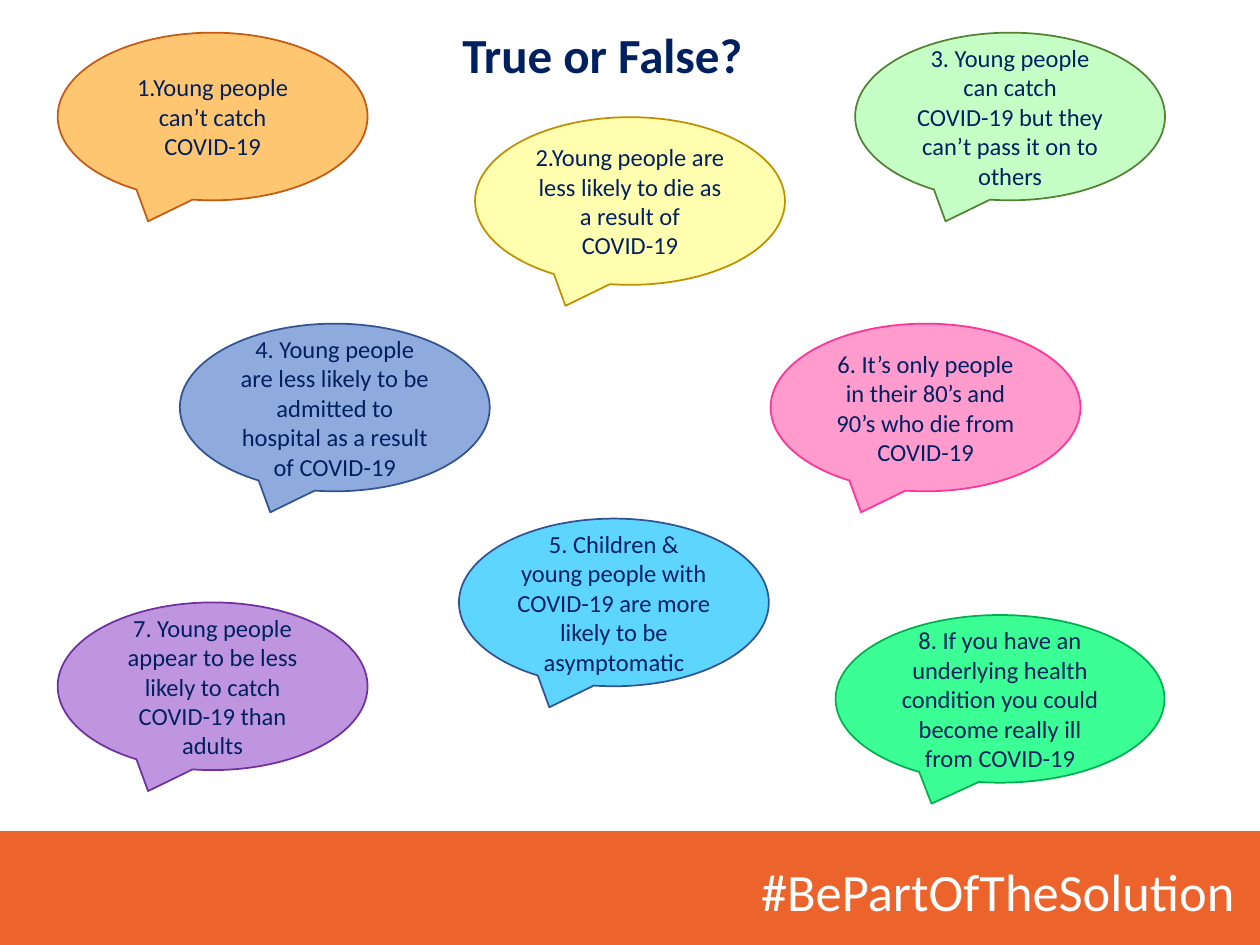
from dataclasses import dataclass

from pptx import Presentation
from pptx.dml.color import RGBColor
from pptx.enum.shapes import MSO_SHAPE as Shape
from pptx.enum.text import MSO_ANCHOR as Anchor, MSO_AUTO_SIZE as AutoSize, PP_ALIGN as Align
from pptx.util import Pt


@dataclass(frozen=True)
class Theme:
    font: str = "Calibri"
    navy: str = "002060"
    orange: str = "EC632B"
    white: str = "FFFFFF"
    title_size: int = 28
    bubble_size: int = 14
    hashtag_size: int = 30


theme = Theme()


def add_filled(kind, box, fill, line):
    shape = slide.shapes.add_shape(kind, *map(Pt, box))
    shape.shadow.inherit = False
    shape.fill.solid()
    shape.fill.fore_color.rgb = RGBColor.from_string(fill)
    shape.line.color.rgb = RGBColor.from_string(line)
    shape.line.width = Pt(1)
    return shape


def write(shape, text, size, color, align, bold=False):
    frame = shape.text_frame
    frame.word_wrap = True
    frame.auto_size = AutoSize.NONE
    frame.vertical_anchor = Anchor.MIDDLE
    paragraph = frame.paragraphs[0]
    paragraph.text = text
    paragraph.alignment = align
    font = paragraph.font
    font.name, font.size, font.bold = theme.font, Pt(size), bold
    font.color.rgb = RGBColor.from_string(color)


deck = Presentation()
deck.slide_width, deck.slide_height = Pt(720), Pt(540)
slide = deck.slides.add_slide(deck.slide_layouts[5])

# Footer band with the hashtag
add_filled(Shape.RECTANGLE, (0, 475.2, 720, 64.8), theme.orange, theme.orange)
hashtag = slide.shapes.add_textbox(Pt(7.2), Pt(486.7), Pt(705.6), Pt(43.9))
write(hashtag, "#BePartOfTheSolution", theme.hashtag_size, theme.white, Align.RIGHT)

# Title
title = slide.shapes.title
title.left, title.top, title.width, title.height = Pt(257), Pt(10.1), Pt(210.2), Pt(41)
write(title, "True or False?", theme.title_size, theme.navy, Align.LEFT, bold=True)

# Statements: left, top, width, fill, outline, text
bubble_width, bubble_height = 177.1, 95.8
statements = [
    (33, 18.7, bubble_width, "FFC671", "C55A11",
     "1.Young people can’t catch COVID-19"),
    (271.5, 67, bubble_width, "FFFFAF", "BF9000",
     "2.Young people are less likely to die as a result of COVID-19"),
    (488.7, 18.7, bubble_width, "C5FFC5", "548235",
     "3. Young people can catch COVID-19 but they can’t pass it on to others"),
    (102.8, 185, bubble_width, "8FAADC", "325491",
     "4. Young people are less likely to be admitted to hospital as a result of COVID-19"),
    (262.3, 296.4, bubble_width, "5DD5FF", "325491",
     "5. Children & young people with COVID-19 are more likely to be asymptomatic"),
    (440.4, 185, bubble_width, "FF9BCD", "FF3399",
     "6. It’s only people in their 80’s and 90’s who die from COVID-19"),
    (33, 344.3, bubble_width, "BF95DF", "7030A0",
     "7. Young people appear to be less likely to catch COVID-19 than adults"),
    (477.5, 351.5, 188, "3BFF94", "00B050",
     "8. If you have an underlying health condition you could become really ill from COVID-19"),
]
for left, top, width, fill, outline, statement in statements:
    bubble = add_filled(Shape.OVAL_CALLOUT, (left, top, width, bubble_height), fill, outline)
    write(bubble, statement, theme.bubble_size, theme.navy, Align.CENTER)

deck.save("out.pptx")
